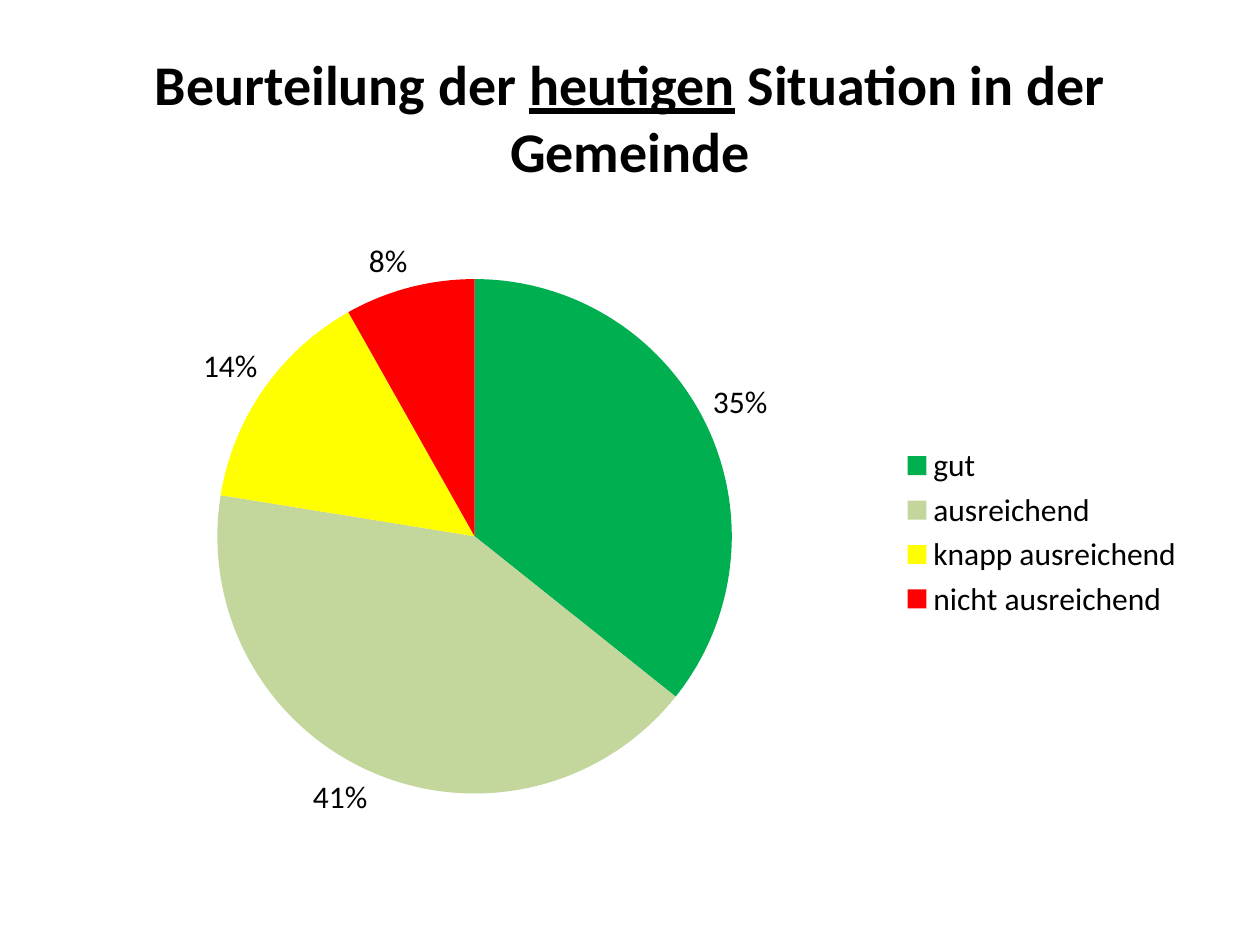
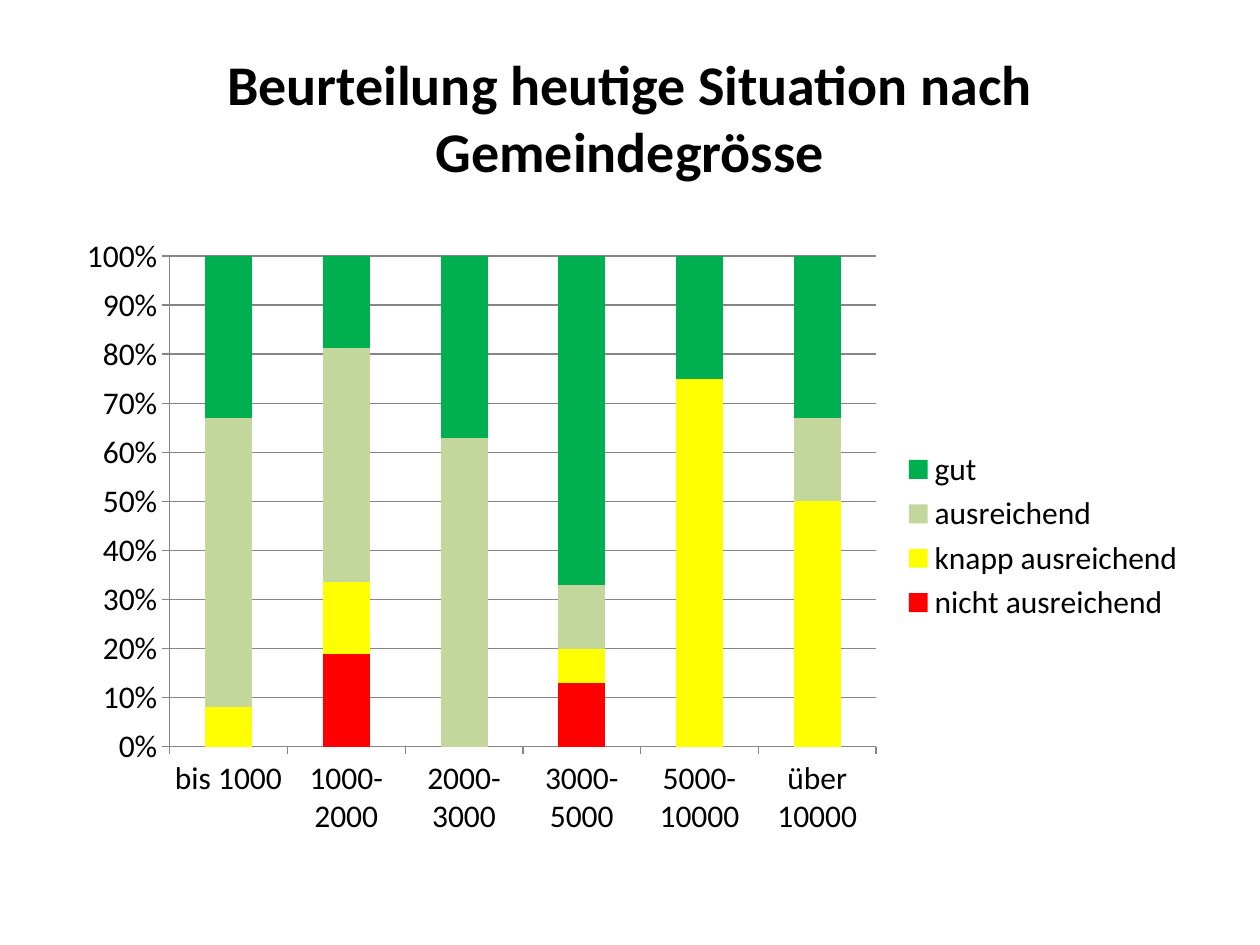
from lxml.etree import SubElement
from pptx import Presentation
from pptx.chart.data import CategoryChartData
from pptx.dml.color import RGBColor
from pptx.enum.chart import XL_CHART_TYPE as ChartType
from pptx.enum.chart import XL_LABEL_POSITION as LabelPosition
from pptx.enum.chart import XL_LEGEND_POSITION as LegendPosition
from pptx.enum.chart import XL_TICK_MARK as TickMark
from pptx.enum.text import MSO_ANCHOR as Anchor
from pptx.enum.text import PP_ALIGN as Align
from pptx.oxml.ns import qn
from pptx.util import Inches, Pt

BLACK = RGBColor(0x00, 0x00, 0x00)
GREY = RGBColor(0x86, 0x86, 0x86)
RATING_COLOURS = {
    "gut": RGBColor(0x00, 0xB0, 0x50),
    "ausreichend": RGBColor(0xC3, 0xD6, 0x9B),
    "knapp ausreichend": RGBColor(0xFF, 0xFF, 0x00),
    "nicht ausreichend": RGBColor(0xFF, 0x00, 0x00),
}
OVERALL_SHARES = [0.35, 0.41, 0.14, 0.08]
COMMUNE_SIZES = ["bis 1000", "1000-2000", "2000-3000", "3000-5000", "5000-10000", "über 10000"]
SHARES_BY_SIZE = {
    "nicht ausreichend": [0, 19, 0, 13, 0, 0],
    "knapp ausreichend": [8, 15, 0, 7, 75, 50],
    "ausreichend": [59, 48, 63, 13, 0, 17],
    "gut": [33, 19, 37, 67, 25, 33],
}


def fill_solid(part, colour):
    part.format.fill.solid()
    part.format.fill.fore_color.rgb = colour


class SurveyDeck:
    """Holds the shared style and the current page; the grid unit is 1/200 of the width."""

    FONT = "Calibri"
    TITLE_SIZE = Pt(32)
    CHART_SIZE = Pt(18)
    LEFT, WIDTH = 10, 180
    TITLE_TOP, TITLE_HEIGHT = 6, 25
    CHART_TOP, CHART_HEIGHT = 35, 99

    def __init__(self):
        self.deck = Presentation()
        self.deck.slide_width = Inches(10)
        self.deck.slide_height = Inches(7.5)
        self.page = None

    def grid(self, *units):
        return [round(self.deck.slide_width * unit / 200) for unit in units]

    def add_page(self, *title_parts):
        """Starts a page; each title part is a (text, underlined) pair."""
        self.page = self.deck.slides.add_slide(self.deck.slide_layouts[6])
        box = self.page.shapes.add_textbox(
            *self.grid(self.LEFT, self.TITLE_TOP, self.WIDTH, self.TITLE_HEIGHT))
        frame = box.text_frame
        frame.word_wrap = True
        frame.vertical_anchor = Anchor.MIDDLE
        para = frame.paragraphs[0]
        para.alignment = Align.CENTER
        for text, underlined in title_parts:
            span = para.add_run()
            span.text = text
            self.style_font(span.font, self.TITLE_SIZE)
            span.font.bold = True
            span.font.underline = underlined

    def style_font(self, font, size):
        font.name = self.FONT
        font.size = size
        font.color.rgb = BLACK

    def add_chart(self, kind, categories, series, plot_area, number_format, shift=(0, 0)):
        """Adds a chart with a legend; plot_area gives x, y, w, h as shares of the chart."""
        data = CategoryChartData(number_format=number_format)
        data.categories = categories
        for name, values in series.items():
            data.add_series(name, values)
        right, down = shift
        frame = self.page.shapes.add_chart(kind, *self.grid(
            self.LEFT + right, self.CHART_TOP + down, self.WIDTH, self.CHART_HEIGHT), data)
        chart = frame.chart
        chart.has_title = False
        self.style_font(chart.font, self.CHART_SIZE)
        chart.has_legend = True
        chart.legend.position = LegendPosition.RIGHT
        chart.legend.include_in_layout = False
        self.place_plot(chart, plot_area)
        return chart

    def place_plot(self, chart, plot_area):
        area = chart.element.find(".//" + qn("c:plotArea"))
        for old_layout in area.findall(qn("c:layout")):
            area.remove(old_layout)
        layout = SubElement(area, qn("c:layout"))
        area.insert(0, layout)
        manual = SubElement(layout, qn("c:manualLayout"))
        settings = [("layoutTarget", "inner"), ("xMode", "edge"), ("yMode", "edge")]
        for tag, value in settings + list(zip("xywh", plot_area)):
            SubElement(manual, qn("c:" + tag)).set("val", str(value))

    def add_pie(self, shares):
        chart = self.add_chart(ChartType.PIE, list(RATING_COLOURS), {"Series 1": shares},
                               (0.136, 0.094, 0.454, 0.825), "0%")
        plot = chart.plots[0]
        plot.vary_by_categories = True
        for index, colour in enumerate(RATING_COLOURS.values()):
            fill_solid(plot.series[0].points[index], colour)
        plot.has_data_labels = True
        labels = plot.data_labels
        labels.show_value = True
        labels.show_percentage = False
        labels.number_format = "0%"
        labels.number_format_is_linked = False
        labels.position = LabelPosition.OUTSIDE_END
        self.style_font(labels.font, self.CHART_SIZE)

    def add_stacked_columns(self, categories, series):
        chart = self.add_chart(ChartType.COLUMN_STACKED_100, categories, series,
                               (0.093, 0.051, 0.623, 0.787), "General", shift=(0.2, 0.6))
        plot = chart.plots[0]
        plot.vary_by_categories = False
        plot.gap_width = 150
        plot.overlap = 100
        for bars in plot.series:
            fill_solid(bars, RATING_COLOURS[bars.name])
        for axis in (chart.category_axis, chart.value_axis):
            axis.major_tick_mark = TickMark.OUTSIDE
            axis.minor_tick_mark = TickMark.NONE
            axis.format.line.color.rgb = GREY
            self.style_font(axis.tick_labels.font, self.CHART_SIZE)
        shares = chart.value_axis
        shares.minimum_scale, shares.maximum_scale, shares.major_unit = 0, 1, 0.1
        shares.has_major_gridlines = True
        shares.major_gridlines.format.line.color.rgb = GREY
        shares.tick_labels.number_format = "0%"
        shares.tick_labels.number_format_is_linked = False


def main():
    survey = SurveyDeck()
    survey.add_page(("Beurteilung der ", False), ("heutigen", True),
                    (" Situation in der Gemeinde", False))
    survey.add_pie(OVERALL_SHARES)
    survey.add_page(("Beurteilung heutige Situation nach Gemeindegrösse", False))
    survey.add_stacked_columns(COMMUNE_SIZES, SHARES_BY_SIZE)
    survey.deck.save("out.pptx")


if __name__ == "__main__":
    main()
